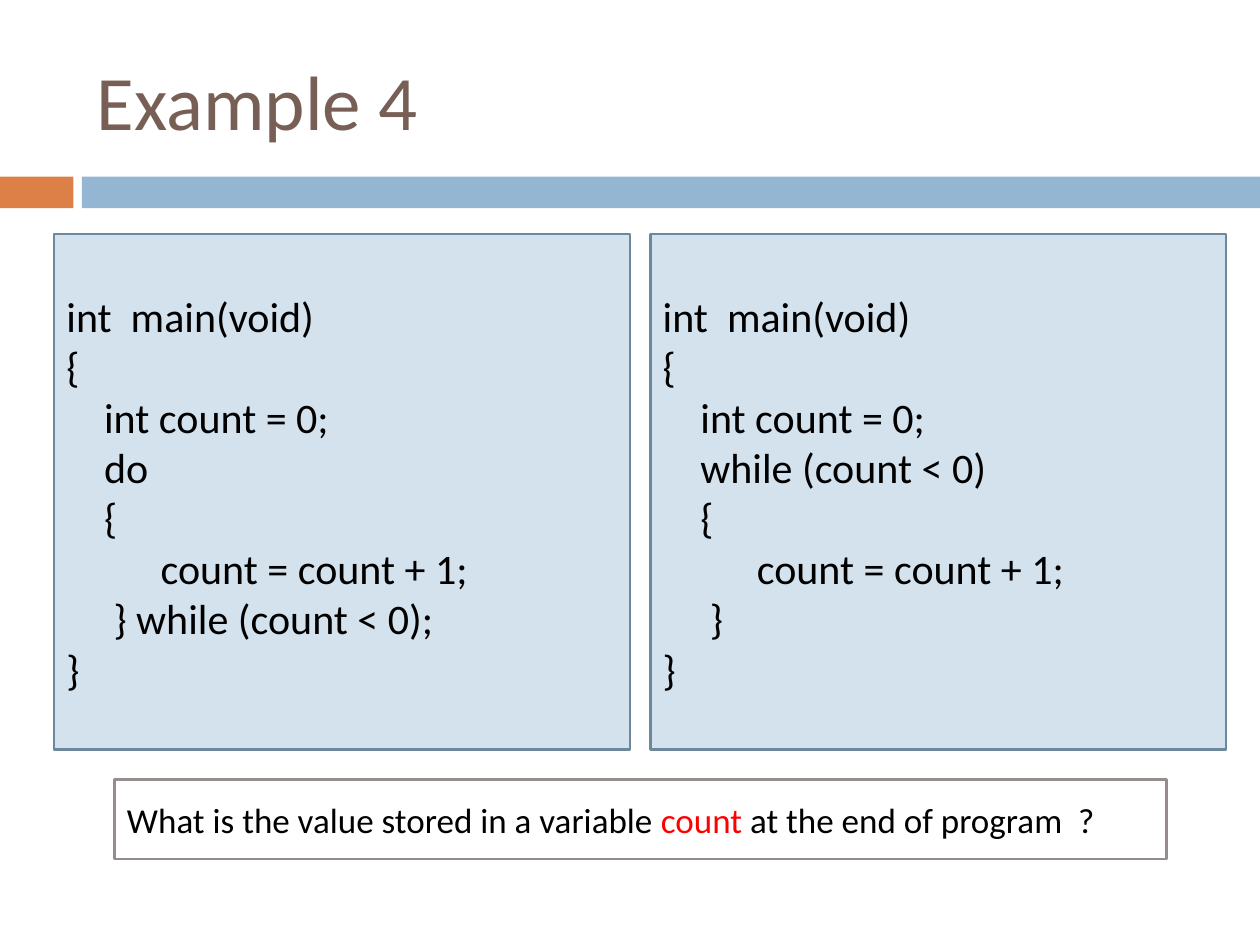
"""Build the "Example 4" slide comparing a do-while loop with a while loop."""
from pptx import Presentation
from pptx.dml.color import RGBColor
from pptx.enum.shapes import MSO_SHAPE
from pptx.enum.text import MSO_ANCHOR, PP_ALIGN
from pptx.util import Cm, Pt

WHITE = RGBColor(0xFF, 0xFF, 0xFF)
BLACK = RGBColor(0x00, 0x00, 0x00)
RED = RGBColor(0xFF, 0x00, 0x00)
BROWN = RGBColor(0x77, 0x5F, 0x55)
ORANGE = RGBColor(0xDD, 0x80, 0x47)
BLUE = RGBColor(0x94, 0xB6, 0xD2)
PALE_BLUE = RGBColor(0xD4, 0xE2, 0xED)
DARK_BLUE = RGBColor(0x6D, 0x87, 0x9B)
GREY = RGBColor(0x96, 0x8C, 0x8C)

INDENT = Cm(0.19)
DO_WHILE = [
    (0, "int  main(void)"), (0, "{"), (4, "int count = 0;"), (4, "do"), (4, "{"),
    (10, "count = count + 1;"), (5, "} while (count < 0);"), (0, "}"),
]
WHILE = [
    (0, "int  main(void)"), (0, "{"), (4, "int count = 0;"), (4, "while (count < 0)"), (4, "{"),
    (10, "count = count + 1;"), (5, "}"), (0, "}"),
]


def add_box(left, top, width, height, fill, line=None):
    sp = s.shapes.add_shape(MSO_SHAPE.RECTANGLE, Cm(left), Cm(top), Cm(width), Cm(height))
    sp.shadow.inherit = False
    sp.fill.solid()
    sp.fill.fore_color.rgb = fill
    if line is None:
        sp.line.fill.background()
    else:
        sp.line.color.rgb = line
        sp.line.width = Pt(1.5)
    sp.text_frame.word_wrap = True
    sp.text_frame.vertical_anchor = MSO_ANCHOR.MIDDLE
    return sp


def add_run(p, text, size, color):
    p.alignment = PP_ALIGN.LEFT
    r = p.add_run()
    r.text = text
    r.font.name = "Calibri"
    r.font.size = Pt(size)
    r.font.color.rgb = color


prs = Presentation()
prs.slide_width = Cm(25.4)
prs.slide_height = Cm(19.05)
s = prs.slides.add_slide(prs.slide_layouts[5])

add_box(0, 3.56, 1.48, 0.64, ORANGE)
add_box(1.65, 3.56, 23.75, 0.64, BLUE)

title = s.shapes.title
title.left, title.top, title.width, title.height = Cm(1.7), Cm(0.64), Cm(22.66), Cm(2.74)
title.text_frame.vertical_anchor = MSO_ANCHOR.MIDDLE
add_run(title.text_frame.paragraphs[0], "Example 4", 44, BROWN)

for left, code in ((1.09, DO_WHILE), (13.11, WHILE)):
    tf = add_box(left, 4.72, 11.61, 10.39, PALE_BLUE, DARK_BLUE).text_frame
    for i, (spaces, text) in enumerate(code):
        p = tf.add_paragraph() if i else tf.paragraphs[0]
        add_run(p, text, 24, BLACK)
        p._p.get_or_add_pPr().set("marL", str(spaces * INDENT))

question = add_box(2.31, 15.72, 21.21, 1.6, WHITE, GREY).text_frame.paragraphs[0]
for text, color in (
    ("What is the value stored in a variable ", BLACK),
    ("count", RED),
    (" at the end of program  ?", BLACK),
):
    add_run(question, text, 20, color)

prs.save("out.pptx")
